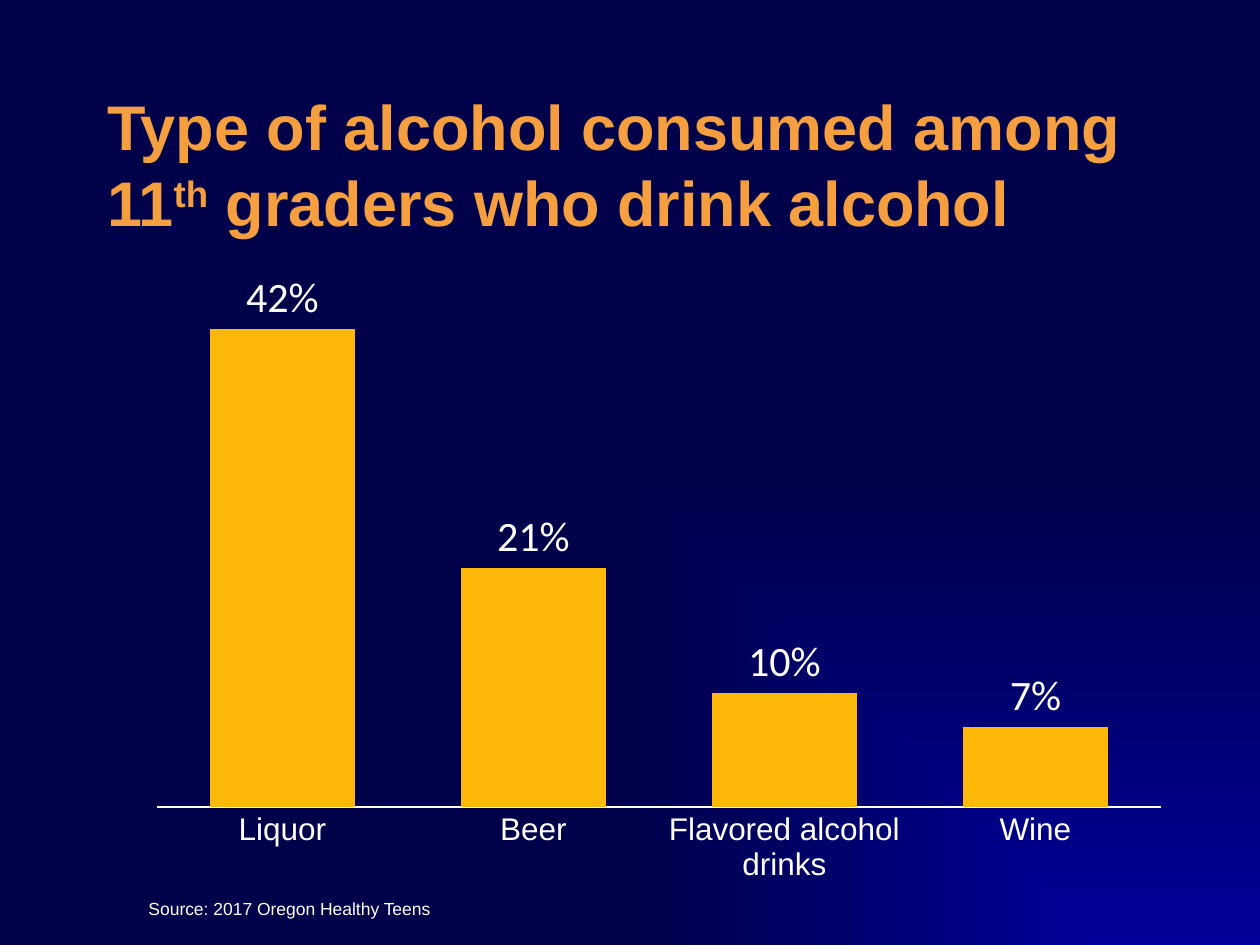
import pptx
import pptx.chart.data
import pptx.dml.color
import pptx.enum.chart
import pptx.enum.text
import pptx.oxml
import pptx.oxml.ns
import pptx.util

Inches = pptx.util.Inches
Pt = pptx.util.Pt
RGBColor = pptx.dml.color.RGBColor
enum = pptx.enum

WHITE = RGBColor(0xFF, 0xFF, 0xFF)
ORANGE = RGBColor(0xF5, 0x9F, 0x41)
GOLD = RGBColor(0xFE, 0xB8, 0x0A)
BLUE = RGBColor(0x00, 0x00, 0x99)
NAVY = RGBColor(0x00, 0x00, 0x4A)

TITLE = [("Type of alcohol consumed among 11", 0), ("th", 30), (" graders who drink alcohol", 0)]
SOURCE = [("Source: 2017 Oregon Healthy Teens", 0)]
SHARES = {"Liquor": 42, "Beer": 21, "Flavored alcohol drinks": 10, "Wine": 7}


def apply(item, values):
    for name, value in values.items():
        setattr(item, name, value)


def style(font, size, color, face="Arial", bold=False):
    apply(font, {"size": Pt(size), "name": face, "bold": bold})
    font.color.rgb = color


def place(shape, left, top, width, height):
    apply(shape, {"left": Inches(left), "top": Inches(top),
                  "width": Inches(width), "height": Inches(height)})


def paint(slide):
    xml = (f'<p:bg {pptx.oxml.ns.nsdecls("p", "a")}><p:bgPr><a:gradFill rotWithShape="0"><a:gsLst>'
           f'<a:gs pos="0"><a:srgbClr val="{BLUE}"/></a:gs>'
           f'<a:gs pos="100000"><a:srgbClr val="{NAVY}"/></a:gs></a:gsLst>'
           '<a:path path="rect"><a:fillToRect l="100000" t="100000"/></a:path>'
           '</a:gradFill><a:effectLst/></p:bgPr></p:bg>')
    slide.element.cSld.insert(0, pptx.oxml.parse_xml(xml))


def write(shape, parts, anchor, **look):
    frame = shape.text_frame
    apply(frame, {"word_wrap": True, "vertical_anchor": anchor,
                  "auto_size": enum.text.MSO_AUTO_SIZE.NONE})
    line = frame.paragraphs[0]
    line.alignment = enum.text.PP_ALIGN.LEFT
    for text, rise in parts:
        run = line.add_run()
        run.text = text
        style(run.font, **look)
        if rise:
            run.font._element.set("baseline", str(rise * 1000))


def fix_plot(chart, **box):
    parts = "".join(f'<c:{key} val="{value}"/>' for key, value in box.items())
    xml = (f'<c:layout {pptx.oxml.ns.nsdecls("c")}><c:manualLayout>'
           '<c:layoutTarget val="inner"/><c:xMode val="edge"/><c:yMode val="edge"/>'
           f'{parts}</c:manualLayout></c:layout>')
    area = chart._chartSpace.chart.plotArea
    for old in area.findall(pptx.oxml.ns.qn("c:layout")):
        area.remove(old)
    area.insert(0, pptx.oxml.parse_xml(xml))


def add_bars(slide):
    data = pptx.chart.data.CategoryChartData()
    data.categories = list(SHARES)
    data.add_series("Series 1", list(SHARES.values()))
    kind = enum.chart.XL_CHART_TYPE.COLUMN_CLUSTERED
    frame = slide.shapes.add_chart(kind, Inches(1.08), Inches(2.17), Inches(8.3), Inches(4.92), data)
    chart = frame.chart
    apply(chart, {"has_legend": False, "has_title": False})
    style(chart.font, 10, WHITE)
    fix_plot(chart, x=0.02, y=0.03, w=0.96, h=0.83)

    apply(chart.value_axis, {"visible": False, "has_major_gridlines": False,
                             "minimum_scale": 0, "maximum_scale": 45})
    axis = chart.category_axis
    apply(axis, {"major_tick_mark": enum.chart.XL_TICK_MARK.NONE, "has_major_gridlines": False})
    style(axis.tick_labels.font, 18, WHITE)
    axis.format.line.width = Pt(1.5)
    axis.format.line.color.rgb = WHITE

    plot = chart.plots[0]
    apply(plot, {"gap_width": 73, "overlap": -27, "vary_by_categories": False,
                 "has_data_labels": True})
    fill = plot.series[0].format.fill
    fill.solid()
    fill.fore_color.rgb = GOLD
    labels = plot.data_labels
    apply(labels, {"show_value": True, "number_format": '0"%"', "number_format_is_linked": False,
                   "position": enum.chart.XL_LABEL_POSITION.OUTSIDE_END})
    style(labels.font, 24, WHITE, "Calibri")


def main():
    deck = pptx.Presentation()
    apply(deck, {"slide_width": Inches(10), "slide_height": Inches(7.5)})
    slide = deck.slides.add_slide(deck.slide_layouts[5])
    paint(slide)

    title = slide.shapes.title
    place(title, 0.75, 0.67, 8.5, 1.25)
    write(title, TITLE, enum.text.MSO_ANCHOR.MIDDLE, size=36, color=ORANGE, bold=True)

    add_bars(slide)

    note = slide.shapes.add_textbox(Inches(1.08), Inches(7.08), Inches(4.72), Inches(0.27))
    write(note, SOURCE, enum.text.MSO_ANCHOR.TOP, size=10, color=WHITE)
    deck.save("out.pptx")


if __name__ == "__main__":
    main()
